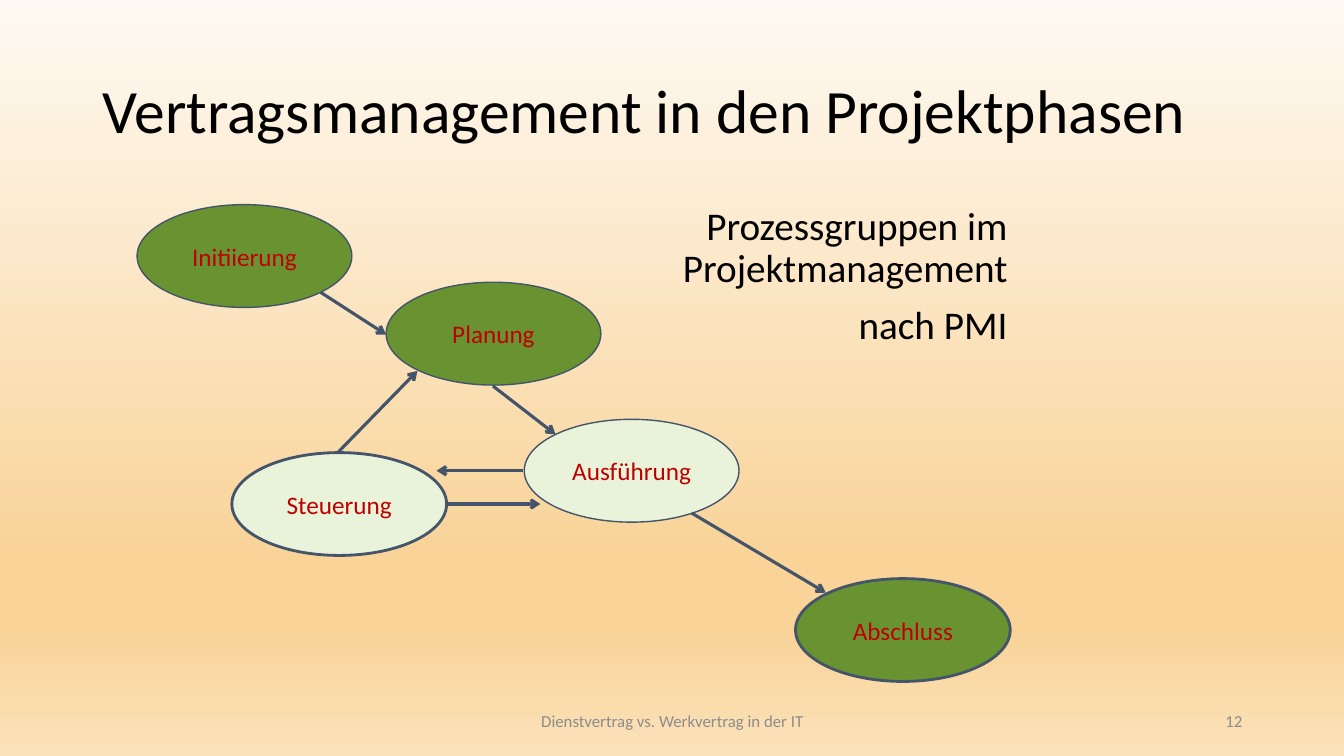
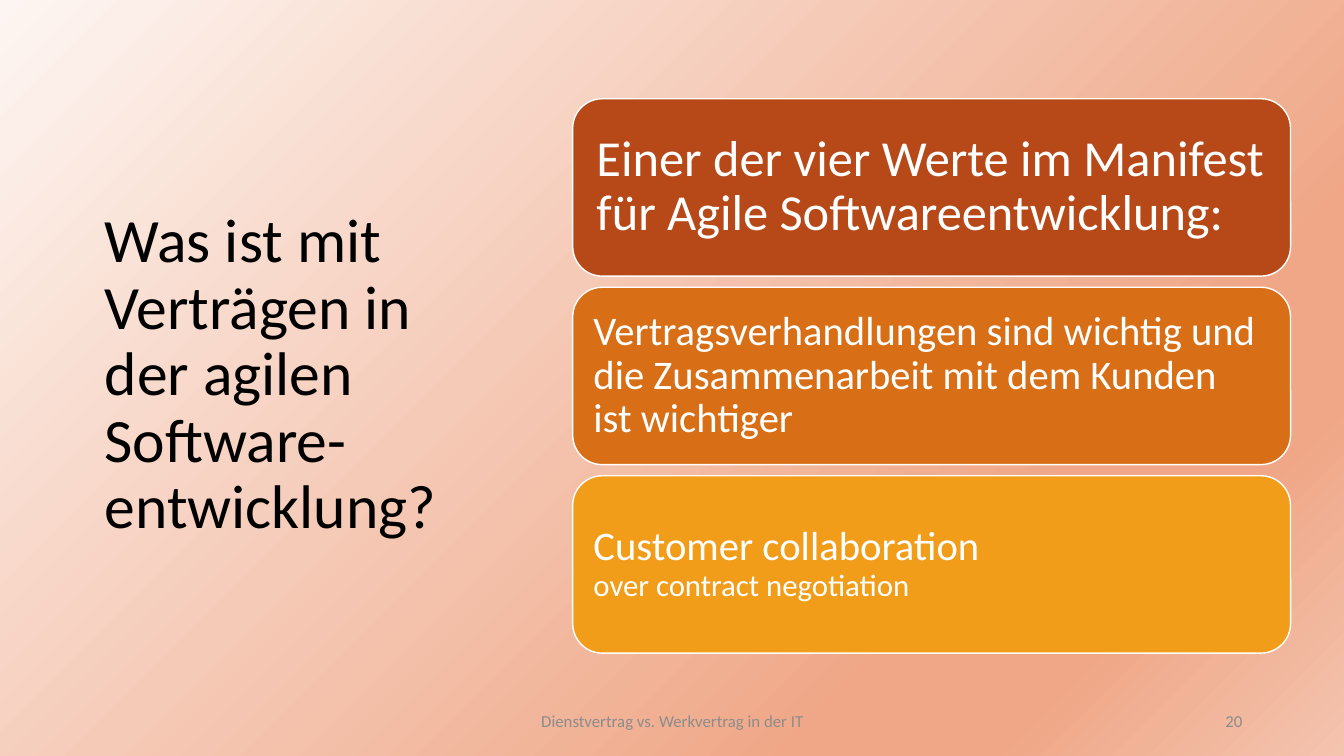
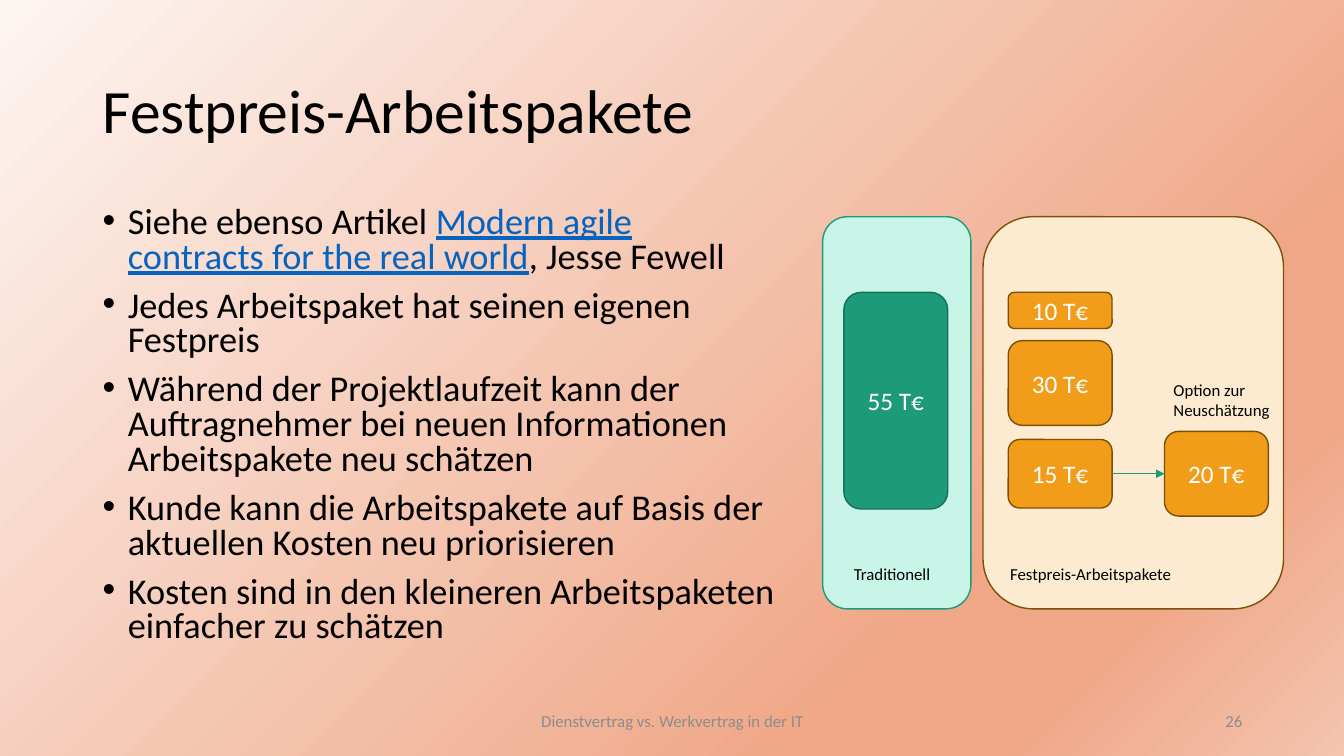
from dataclasses import dataclass

from lxml.etree import SubElement
from pptx import Presentation
from pptx.dml.color import RGBColor
from pptx.enum.shapes import MSO_CONNECTOR as Connector
from pptx.enum.shapes import MSO_SHAPE as Preset
from pptx.enum.text import MSO_ANCHOR as Anchor
from pptx.enum.text import PP_ALIGN as Align
from pptx.oxml.ns import qn
from pptx.util import Inches, Pt

FONT = "Calibri"
FOOTER = "Dienstvertrag vs. Werkvertrag in der IT"
COLORS = {
    "text": "000000", "white": "FFFFFF", "footer": "8C8C8C", "link": "0563C1",
    "slate": "44546A", "red": "C00000", "leaf": "699331", "pale_leaf": "E8F3DA",
    "rust": "B74919", "orange": "D86E15", "amber": "F19D19", "brown": "7D5008",
    "cream": "FCEBD1", "teal": "1D9A78", "dark_teal": "157259", "mint": "C8F5E8",
}
STOPS = (0, 74, 83, 100)
SAND = (("FEFAF3", "F9D398", "F9D398", "FBE2BA"), 90)
PEACH = (("FDF5F2", "EFA787", "EFA787", "F4C4AF"), 45)
TITLE_BOX = (0.92, 0.4, 11.5, 1.45)


@dataclass(frozen=True)
class Span:
    text: str
    size: float | None = None
    color: str | None = None
    underline: bool = False


@dataclass(frozen=True)
class Phase:
    name: str
    left: float
    top: float
    fill: str
    line_width: float = 1


@dataclass(frozen=True)
class Arrow:
    start: tuple[float, float]
    end: tuple[float, float]


@dataclass(frozen=True)
class Value:
    spans: list[Span]
    fill: str
    inset: float


@dataclass(frozen=True)
class Package:
    price: str
    left: float
    top: float
    height: float
    fill: str = "amber"
    line: str = "brown"


@dataclass(frozen=True)
class Label:
    text: str
    left: float
    top: float
    width: float
    height: float


PHASES = [
    Phase("Initiierung", 1.36, 2.03, "leaf"),
    Phase("Planung", 3.83, 2.8, "leaf"),
    Phase("Ausführung", 5.2, 4.16, "pale_leaf"),
    Phase("Steuerung", 2.3, 4.49, "pale_leaf", 2),
    Phase("Abschluss", 7.89, 5.74, "leaf", 2),
]
TRANSITIONS = [
    Arrow((3.18, 2.9), (3.83, 3.32)),
    Arrow((4.89, 3.83), (5.51, 4.31)),
    Arrow((5.19, 4.67), (4.33, 4.67)),
    Arrow((4.41, 5), (5.36, 5)),
    Arrow((6.86, 5.09), (8.19, 5.88)),
    Arrow((3.35, 4.49), (4.14, 3.68)),
]
VALUES = [
    Value([Span("Einer der vier Werte im Manifest für Agile Softwareentwicklung:", 36)],
          "rust", 0.15),
    Value([Span("Vertragsverhandlungen sind wichtig und\n"
                "die Zusammenarbeit mit dem Kunden\nist wichtiger", 29)],
          "orange", 0.12),
    Value([Span("Customer collaboration\n", 29), Span("over contract negotiation", 22)],
          "amber", 0.12),
]
POINTS = [
    [Span("Siehe ebenso Artikel "),
     Span("Modern agile contracts for the real world", color="link", underline=True),
     Span(", Jesse Fewell")],
    [Span("Jedes Arbeitspaket hat seinen eigenen Festpreis")],
    [Span("Während der Projektlaufzeit kann der Auftragnehmer bei neuen "
          "Informationen Arbeitspakete neu schätzen")],
    [Span("Kunde kann die Arbeitspakete auf Basis der aktuellen Kosten neu priorisieren")],
    [Span("Kosten sind in den kleineren Arbeitspaketen einfacher zu schätzen")],
]
PACKAGES = [
    Package("55 T€", 8.37, 2.9, 2.15, "teal", "dark_teal"),
    Package("10 T€", 10, 2.9, 0.36),
    Package("30 T€", 10, 3.38, 0.84),
    Package("15 T€", 10, 4.36, 0.68),
    Package("20 T€", 11.55, 4.28, 0.84),
]
LABELS = [
    Label("Traditionell", 8.37, 5.54, 1.17, 0.3),
    Label("Option zur\u0020Neuschätzung", 11.54, 3.72, 1.19, 0.5),
    Label("Festpreis-Arbeitspakete", 9.92, 5.54, 2.09, 0.3),
]


def rgb(name: str) -> RGBColor:
    return RGBColor.from_string(COLORS[name])


def write(shape, paragraphs, *, size: float = 18, color: str = "text", align=Align.LEFT,
          anchor=Anchor.TOP, spacing: float = 1, before: float = 0,
          bullet: str = "", inset: float | None = None) -> None:
    frame = shape.text_frame
    frame.word_wrap = True
    frame.vertical_anchor = anchor
    if inset is not None:
        frame.margin_left = frame.margin_right = Inches(inset)
        frame.margin_top = frame.margin_bottom = Inches(inset)
    for index, spans in enumerate(paragraphs):
        paragraph = frame.add_paragraph() if index else frame.paragraphs[0]
        paragraph.alignment = align
        paragraph.line_spacing = spacing
        if index:
            paragraph.space_before = Pt(before)
        if bullet:
            properties = paragraph._p.get_or_add_pPr()
            properties.set("marL", str(Inches(0.25)))
            properties.set("indent", str(-Inches(0.25)))
            SubElement(properties, qn("a:buFont"), typeface="Arial")
            SubElement(properties, qn("a:buChar"), char=bullet)
        for span in [Span(spans)] if isinstance(spans, str) else spans:
            for number, line in enumerate(span.text.split("\n")):
                if number:
                    paragraph.add_line_break()
                if not line:
                    continue
                run = paragraph.add_run()
                run.text = line
                run.font.name = FONT
                run.font.size = Pt(span.size or size)
                run.font.color.rgb = rgb(span.color or color)
                if span.underline:
                    run.font.underline = True


def add_text(slide, box, paragraphs, **text_format) -> None:
    write(slide.shapes.add_textbox(*map(Inches, box)), paragraphs, **text_format)


def add_panel(slide, preset, box, fill: str, line: str, line_width: float = 1):
    panel = slide.shapes.add_shape(preset, *map(Inches, box))
    panel.shadow.inherit = False
    panel.fill.solid()
    panel.fill.fore_color.rgb = rgb(fill)
    panel.line.color.rgb = rgb(line)
    panel.line.width = Pt(line_width)
    return panel


def add_arrow(slide, arrow: Arrow, color: str, width: float, head: str) -> None:
    connector = slide.shapes.add_connector(
        Connector.STRAIGHT, *map(Inches, (*arrow.start, *arrow.end)))
    connector.line.color.rgb = rgb(color)
    connector.line.width = Pt(width)
    SubElement(connector.line._get_or_add_ln(), qn("a:tailEnd"), type=head)
    SubElement(connector._element.spPr, qn("a:effectLst"))


def add_title(slide, text: str, box=TITLE_BOX) -> None:
    add_text(slide, box, [text], size=44, anchor=Anchor.MIDDLE, spacing=0.9)


def new_slide(deck, number: int, background):
    slide = deck.slides.add_slide(deck.slide_layouts[6])
    shades, angle = background
    slide.background.fill.gradient()
    gradient = slide.element.find(".//" + qn("a:gradFill"))
    stops = gradient.find(qn("a:gsLst"))
    for stop in list(stops):
        stops.remove(stop)
    for position, shade in zip(STOPS, shades):
        stop = SubElement(stops, qn("a:gs"), pos=str(position * 1000))
        SubElement(stop, qn("a:srgbClr"), val=shade)
    gradient.find(qn("a:lin")).set("ang", str(angle * 60000))
    small = {"size": 12, "color": "footer", "anchor": Anchor.MIDDLE}
    add_text(slide, (4.42, 6.95, 4.5, 0.4), [FOOTER], align=Align.CENTER, **small)
    add_text(slide, (9.42, 6.95, 3, 0.4), [str(number)], align=Align.RIGHT, **small)
    return slide


def build_phases(deck) -> None:
    slide = new_slide(deck, 12, SAND)
    add_title(slide, "Vertragsmanagement in den Projektphasen")
    add_text(slide, (1.09, 2, 9, 4.95),
             ["Prozessgruppen im\nProjektmanagement", "nach PMI"],
             size=28, align=Align.RIGHT, spacing=0.9, before=10)
    for phase in PHASES:
        ellipse = add_panel(slide, Preset.OVAL, (phase.left, phase.top, 2.13, 1.02),
                            phase.fill, "slate", phase.line_width)
        write(ellipse, [phase.name], color="red", align=Align.CENTER, anchor=Anchor.MIDDLE)
    for transition in TRANSITIONS:
        add_arrow(slide, transition, "slate", 2.25, "arrow")


def build_agile_values(deck) -> None:
    slide = new_slide(deck, 20, PEACH)
    add_title(slide, "Was ist mit Verträgen in der agilen Software-entwicklung?",
              (0.94, 1.11, 3.74, 5.24))
    height, gap = 1.76, 0.11
    for row, value in enumerate(VALUES):
        card = add_panel(slide, Preset.ROUNDED_RECTANGLE,
                         (5.68, 0.98 + row * (height + gap), 7.12, height),
                         value.fill, "white")
        write(card, [value.spans], color="white", anchor=Anchor.MIDDLE,
              spacing=0.9, inset=value.inset)


def build_work_packages(deck) -> None:
    slide = new_slide(deck, 26, PEACH)
    add_title(slide, "Festpreis-Arbeitspakete")
    add_text(slide, (0.92, 2, 6.87, 4.76), POINTS, size=25.9, spacing=0.8,
             before=10, bullet="•")
    for left, width, fill, line in ((8.16, 1.47, "mint", "teal"),
                                    (9.75, 2.98, "cream", "brown")):
        add_panel(slide, Preset.ROUNDED_RECTANGLE, (left, 2.15, width, 3.89), fill, line)
    for package in PACKAGES:
        block = add_panel(slide, Preset.ROUNDED_RECTANGLE,
                          (package.left, package.top, 1.03, package.height),
                          package.fill, package.line)
        write(block, [package.price], color="white", align=Align.CENTER,
              anchor=Anchor.MIDDLE)
    add_arrow(slide, Arrow((11.03, 4.7), (11.55, 4.7)), "teal", 1, "triangle")
    for label in LABELS:
        add_text(slide, (label.left, label.top, label.width, label.height),
                 [label.text], size=12)


def main() -> None:
    deck = Presentation()
    deck.slide_width, deck.slide_height = Inches(13.33), Inches(7.5)
    build_phases(deck)
    build_agile_values(deck)
    build_work_packages(deck)
    deck.save("out.pptx")


if __name__ == "__main__":
    main()
